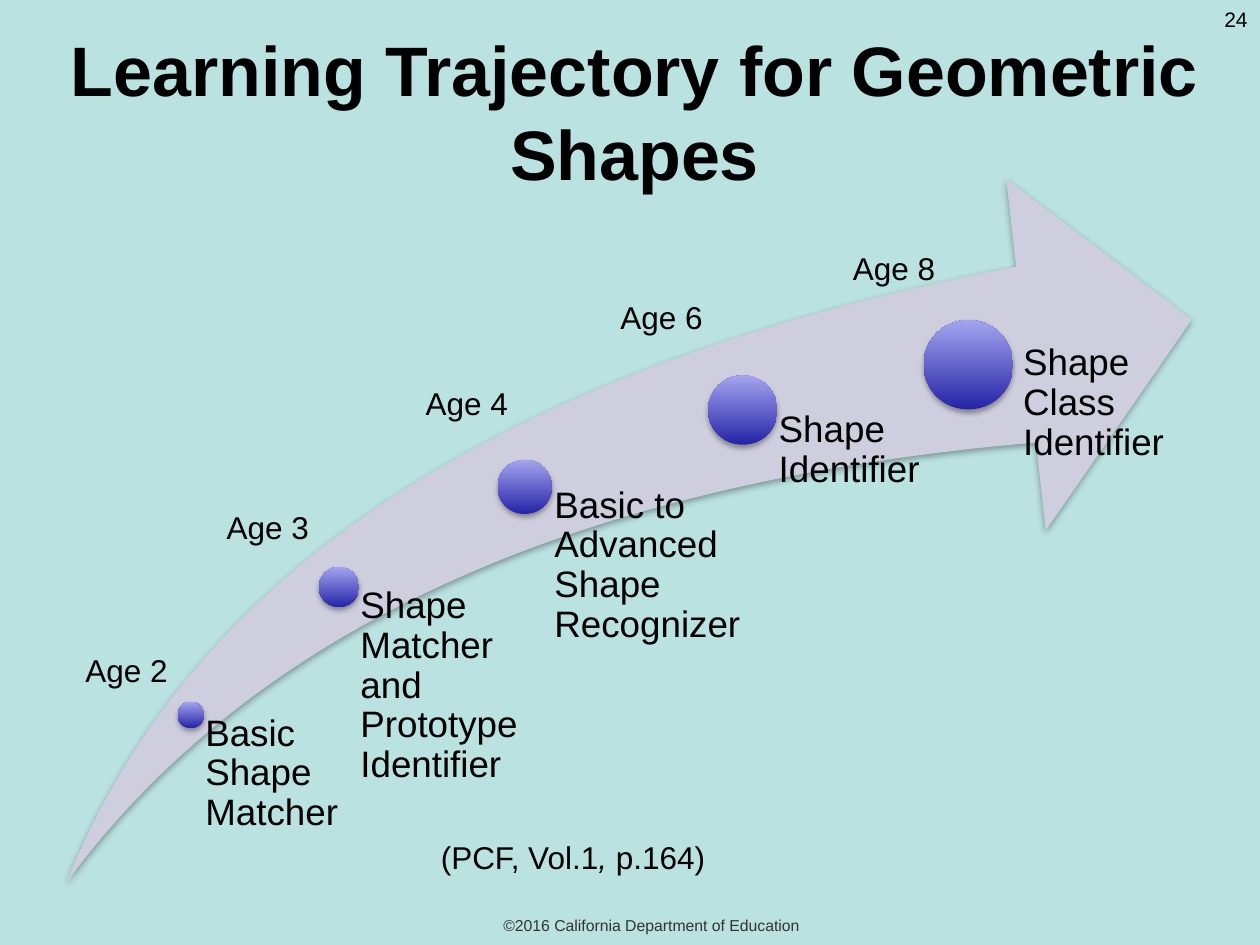
from lxml import etree
from pptx import Presentation
from pptx import util as u
from pptx.dml.color import RGBColor
from pptx.enum import shapes, text
from pptx.oxml.ns import qn

PX = 9144  # 100 px to the inch
FONT = "Arial"
BLACK = "000000"
LEFT, CENTER, RIGHT = text.PP_ALIGN.LEFT, text.PP_ALIGN.CENTER, text.PP_ALIGN.RIGHT
TOP, MIDDLE = text.MSO_ANCHOR.TOP, text.MSO_ANCHOR.MIDDLE

# age, age box, circle (left, top, diameter), level, level box
STAGES = [
    ("Age 2", (58, 512, 92, 40), LEFT, (141, 557, 21),
     "Basic Shape Matcher", (152, 567, 117, 133)),
    ("Age 3", (150, 398, 125, 40), CENTER, (253, 450, 32),
     "Shape Matcher and Prototype Identifier", (269, 466, 148, 234)),
    ("Age 4", (317, 300, 107, 40), CENTER, (395, 365, 43),
     "Basic to Advanced Shape Recognizer", (417, 386, 172, 314)),
    ("Age 6", (475, 232, 100, 40), CENTER, (562, 298, 55),
     "Shape Identifier", (589, 326, 179, 374)),
    ("Age 8", (665, 193, 89, 40), CENTER, (733, 254, 71),
     "Shape Class Identifier", (775, 273, 179, 194)),
]


def color(hex_value):
    return RGBColor.from_string(hex_value)


def emu(box):
    return [u.Emu(length * PX) for length in box]


def add_text(slide, box, words, size, align=LEFT, anchor=TOP, hex_value=BLACK, bold=False):
    """Add a one-paragraph text box; words is a list of (text, italic) or a string."""
    frame = slide.shapes.add_textbox(*emu(box)).text_frame
    frame.word_wrap = True
    frame.vertical_anchor = anchor
    paragraph = frame.paragraphs[0]
    paragraph.alignment = align
    for part, italic in [(words, False)] if isinstance(words, str) else words:
        run = paragraph.add_run()
        run.text = part
        run.font.name, run.font.size = FONT, u.Pt(size)
        run.font.bold, run.font.italic = bold, italic
        run.font.color.rgb = color(hex_value)
    return frame


def add_soft_shape(slide, preset, box):
    """Add an unlined shape with a soft shadow below it."""
    shape = slide.shapes.add_shape(preset, *emu(box))
    shape.shadow.inherit = False
    shape.line.fill.background()
    effects = shape.element.spPr.find(qn("a:effectLst"))
    shadow = etree.SubElement(effects, qn("a:outerShdw"), blurRad=str(u.Pt(3.1)),
                              dist=str(u.Pt(1.8)), dir="5400000", rotWithShape="0")
    tint = etree.SubElement(shadow, qn("a:srgbClr"), val=BLACK)
    etree.SubElement(tint, qn("a:alpha"), val="35000")
    return shape


def add_trajectory(slide, box):
    arrow = add_soft_shape(slide, shapes.MSO_SHAPE.SWOOSH_ARROW, box)
    arrow.adjustments[0] = arrow.adjustments[1] = 0.25
    arrow.fill.solid()
    arrow.fill.fore_color.rgb = color("CECEDE")


def add_stage(slide, age, age_box, age_align, circle, level, level_box):
    left, top, diameter = circle
    marker = add_soft_shape(slide, shapes.MSO_SHAPE.OVAL, (left, top, diameter, diameter))
    marker.fill.gradient()
    marker.fill.gradient_angle = 90
    for stop, hex_value in zip(marker.fill.gradient_stops, ("2424A8", "A4A4EF")):
        stop.color.rgb = color(hex_value)

    frame = add_text(slide, level_box, level, 21)
    frame.margin_left = u.Emu(round(diameter * 0.525) * PX)
    frame.margin_top = frame.margin_right = frame.margin_bottom = 0
    frame.paragraphs[0].line_spacing = 0.9
    add_text(slide, age_box, age, 18, age_align)


def main():
    deck = Presentation()
    deck.slide_width, deck.slide_height = emu((1000, 750))
    slide = deck.slides.add_slide(deck.slide_layouts[6])
    slide.background.fill.solid()
    slide.background.fill.fore_color.rgb = color("BAE2E1")

    add_text(slide, (925, 0, 75, 30), "24", 12, RIGHT)
    add_text(slide, (58, 722, 918, 25), "©2016 California Department of Education", 9,
             CENTER, MIDDLE, "333333")
    add_trajectory(slide, (53, 142, 893, 558))
    for stage in STAGES:
        add_stage(slide, *stage)
    add_text(slide, (340, 660, 325, 40),
             [("(PCF, Vol.1", False), (", ", True), ("p.164)", False)], 18)
    add_text(slide, (4, 25, 999, 125), "Learning Trajectory for Geometric Shapes", 40,
             CENTER, MIDDLE, bold=True)
    deck.save("out.pptx")


if __name__ == "__main__":
    main()
